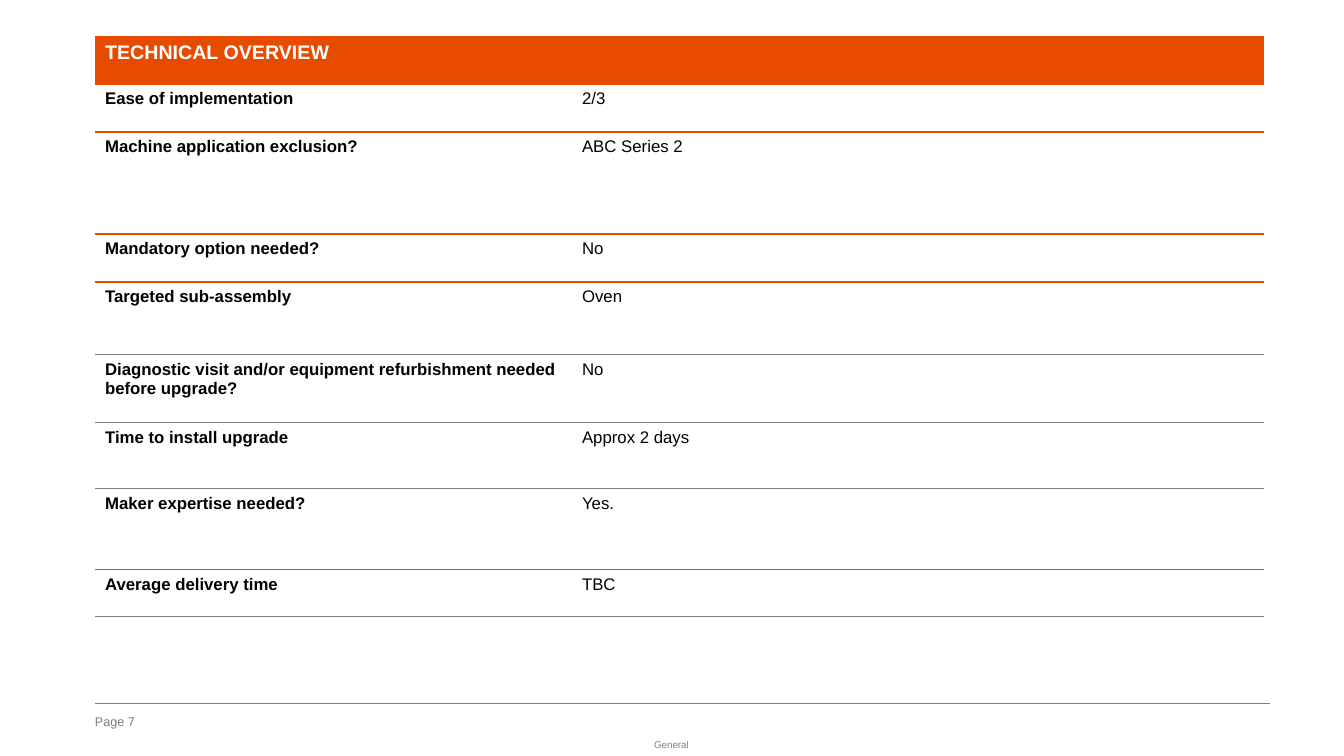
import pptx
import pptx.util
import pptx.dml.color
import pptx.enum.shapes
import pptx.enum.text
import pptx.oxml
import pptx.oxml.ns
import lxml.etree

PX = 914400 / 100.8
THEME = {
    "font": "Arial",
    "orange": "E64B00", "grey": "7F7F7F", "white": "FFFFFF", "black": "000000",
    "heading": 14, "body": 12, "page": 9, "label": 7,
}


def px(length):
    return pptx.util.Emu(round(length * PX))


def write(text_frame, text, size, color, bold=False):
    paragraph = text_frame.paragraphs[0]
    run = paragraph.add_run()
    run.text = text
    formats = {"name": THEME["font"], "size": pptx.util.Pt(THEME[size]), "bold": bold}
    for name, value in formats.items():
        setattr(run.font, name, value)
    run.font.color.rgb = pptx.dml.color.RGBColor.from_string(THEME[color])
    return paragraph


presentation = pptx.Presentation()
presentation.slide_width, presentation.slide_height = px(1344), px(756)
slide = presentation.slides.add_slide(presentation.slide_layouts[6])

# Footer rule
rule = slide.shapes.add_connector(
    pptx.enum.shapes.MSO_CONNECTOR.STRAIGHT, px(95), px(703), px(1270), px(703))
rule.line.color.rgb = pptx.dml.color.RGBColor.from_string(THEME["grey"])
rule.line.width = pptx.util.Pt(0.25)
lxml.etree.SubElement(rule._element.spPr, pptx.oxml.ns.qn("a:effectLst"))

# Footer texts
align = pptx.enum.text.PP_ALIGN
anchor = pptx.enum.text.MSO_ANCHOR
footers = [
    ("Page 7", (95, 714, 52, 15), "page", align.LEFT, anchor.BOTTOM, False),
    ("General", (642, 734, 59, 22), "label", align.CENTER, anchor.MIDDLE, True),
]
for text, box, size, alignment, vertical, wrap in footers:
    text_frame = slide.shapes.add_textbox(*map(px, box)).text_frame
    formats = {"margin_left": 0, "margin_right": 0, "margin_top": 0, "margin_bottom": 0,
               "vertical_anchor": vertical, "word_wrap": wrap}
    for name, value in formats.items():
        setattr(text_frame, name, value)
    write(text_frame, text, size, "grey").alignment = alignment

# Overview rows: label, answer, height, colour of the rule below
rows = [
    ("TECHNICAL OVERVIEW", "", 47, "orange"),
    ("Ease of implementation", "2/3", 48, "orange"),
    ("Machine application exclusion?", "ABC Series 2", 102, "orange"),
    ("Mandatory option needed?", "No", 48, "orange"),
    ("Targeted sub-assembly", "Oven", 73, "grey"),
    ("Diagnostic visit and/or equipment refurbishment needed before upgrade?", "No", 68, "grey"),
    ("Time to install upgrade", "Approx 2 days", 66, "grey"),
    ("Maker expertise needed?", "Yes.", 81, "orange"),
    ("Average delivery time", "TBC", 47, "grey"),
]

# Table
column_widths = (477, 692)
table = slide.shapes.add_table(
    len(rows), len(column_widths), px(95), px(37),
    px(sum(column_widths)), px(sum(row[2] for row in rows))).table
table.first_row = table.horz_banding = False
for column, width in zip(table.columns, column_widths):
    column.width = px(width)
table.cell(0, 0).merge(table.cell(0, 1))

rule_above = "orange"
for index, (label, answer, height, rule_below) in enumerate(rows):
    table.rows[index].height = px(height)
    heading = index == 0
    for column, text in enumerate((label, answer)):
        cell = table.cell(index, column)
        cell.fill.solid()
        cell.fill.fore_color.rgb = pptx.dml.color.RGBColor.from_string(
            THEME["orange" if heading else "white"])
        if text:
            write(cell.text_frame, text, "heading" if heading else "body",
                  "white" if heading else "black", bold=column == 0)

        # Cell borders: horizontal rules only
        borders = {"lnL": None, "lnR": None, "lnT": rule_above, "lnB": rule_below}
        properties = cell._tc.get_or_add_tcPr()
        for place, (side, color) in enumerate(borders.items()):
            paint = (f'<a:solidFill><a:srgbClr val="{THEME[color]}"/></a:solidFill>'
                     if color else "<a:noFill/>")
            properties.insert(place, pptx.oxml.parse_xml(
                f'<a:{side} {pptx.oxml.ns.nsdecls("a")} w="{pptx.util.Pt(1)}">{paint}</a:{side}>'))
    rule_above = rule_below

presentation.save("out.pptx")
